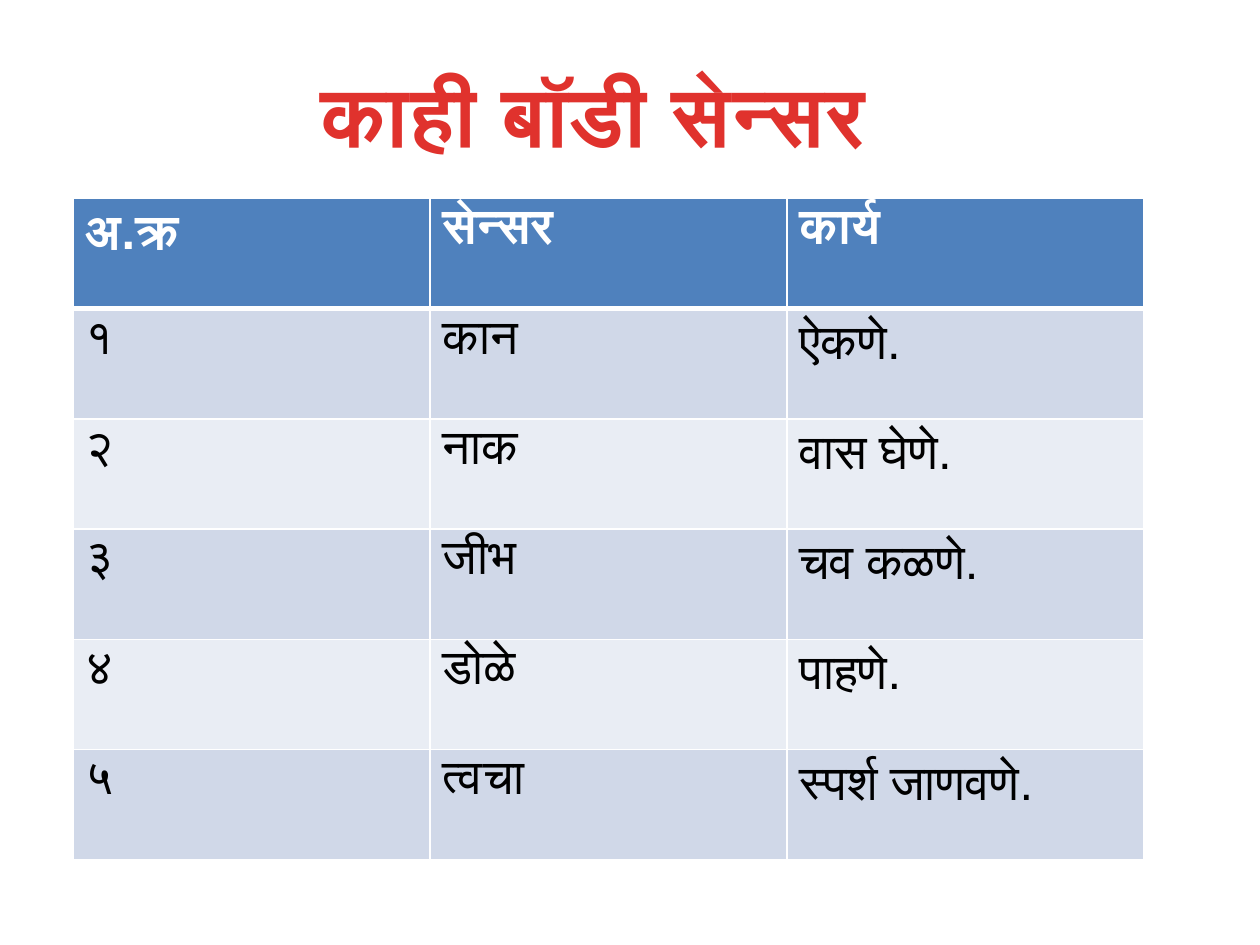
"""Build a slide with a titled table of body sensors and what they do."""
import pptx
import pptx.dml.color
import pptx.enum.text
import pptx.oxml.ns
import pptx.util
from lxml import etree

COLORS = {"title": "E0322D", "header": "4F81BD", "odd": "D0D8E8",
          "even": "E9EDF4", "white": "FFFFFF", "black": "000000"}
ROWS = [
    ("अ.क्र", "सेन्सर", "कार्य"),
    ("१", "कान", "ऐकणे."),
    ("२", "नाक", "वास घेणे."),
    ("३", "जीभ", "चव कळणे."),
    ("४", "डोळे", "पाहणे."),
    ("५", "त्वचा", "स्पर्श जाणवणे."),
]


def color(name):
    return pptx.dml.color.RGBColor.from_string(COLORS[name])


def write(frame, text, *, size, ink, bold=False, align=None, spacing=None):
    para = frame.paragraphs[0]
    para.alignment = align
    span = para.add_run()
    span.text = text
    span.font.name = "Arial"
    span.font.size = pptx.util.Pt(size)
    span.font.bold = bold
    span.font.color.rgb = color(ink)
    if spacing:
        span.font._element.set("spc", str(round(spacing * 100)))


class SlideBuilder:
    def __init__(self, deck):
        self.width, self.height = deck.slide_width, deck.slide_height
        self.page = deck.slides.add_slide(deck.slide_layouts[6])

    def place(self, left, top, width, height):
        return (round(left * self.width), round(top * self.height),
                round(width * self.width), round(height * self.height))

    def title(self, text, area):
        box = self.page.shapes.add_textbox(*self.place(*area))
        frame = box.text_frame
        frame.word_wrap = True
        frame.vertical_anchor = pptx.enum.text.MSO_ANCHOR.MIDDLE
        frame.margin_right = pptx.util.Inches(0.68)
        write(frame, text, size=48, ink="title", bold=True, spacing=0.5,
              align=pptx.enum.text.PP_ALIGN.CENTER)

    def border(self, cell, side, points):
        properties = cell._tc.get_or_add_tcPr()
        line = etree.Element(pptx.oxml.ns.qn(f"a:ln{side}"),
                             w=str(pptx.util.Pt(points)))
        fill = etree.SubElement(line, pptx.oxml.ns.qn("a:solidFill"))
        etree.SubElement(fill, pptx.oxml.ns.qn("a:srgbClr"), val=COLORS["white"])
        properties.insert("LRTB".index(side), line)

    def table(self, rows, area):
        shape = self.page.shapes.add_table(len(rows), len(rows[0]), *self.place(*area))
        for row, texts in enumerate(rows):
            header = row == 0
            shade = "header" if header else "odd" if row % 2 else "even"
            for column, text in enumerate(texts):
                cell = shape.table.cell(row, column)
                cell.fill.solid()
                cell.fill.fore_color.rgb = color(shade)
                write(cell.text_frame, text, size=28, bold=header,
                      ink="white" if header else "black")
                for side in "LRTB":
                    thick = (row, side) in ((0, "B"), (1, "T"))
                    self.border(cell, side, 3 if thick else 1)


def main():
    deck = pptx.Presentation()
    deck.slide_width = pptx.util.Inches(10)
    deck.slide_height = pptx.util.Inches(7.5)
    builder = SlideBuilder(deck)
    builder.title("काही बॉडी सेन्सर", (0.05, 0.04, 0.9, 0.16))
    builder.table(ROWS, (0.058, 0.21, 0.85, 0.7))
    deck.save("out.pptx")


if __name__ == "__main__":
    main()
